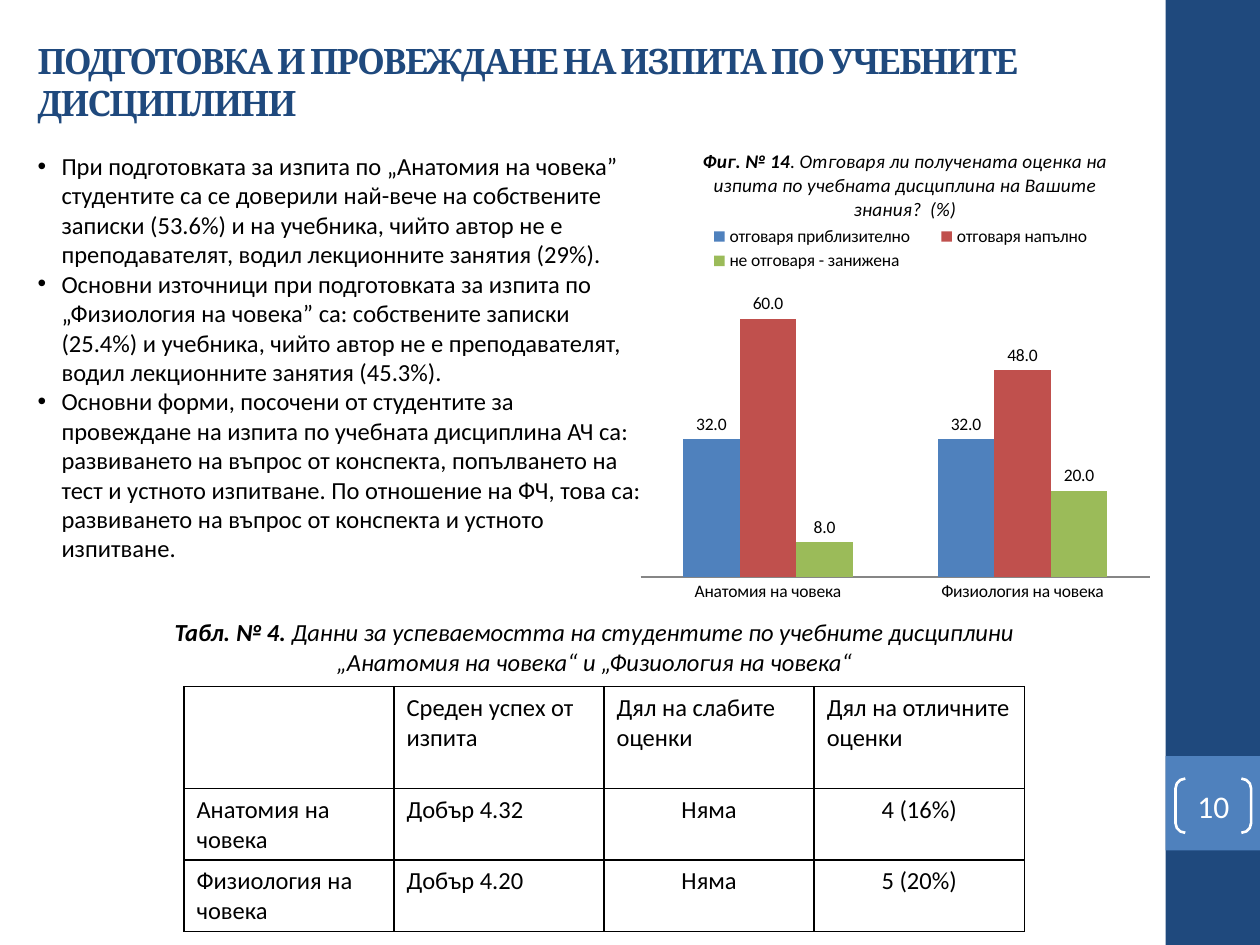
"""Builds the slide on preparing and holding the exam in the two disciplines."""
import pptx
import pptx.chart.data
import pptx.dml.color
import pptx.enum.chart
import pptx.enum.shapes
import pptx.enum.text
import pptx.oxml
import pptx.oxml.ns
import pptx.util

Inches = pptx.util.Inches
Pt = pptx.util.Pt
qn = pptx.oxml.ns.qn
MSO_SHAPE = pptx.enum.shapes.MSO_SHAPE
ANCHOR = pptx.enum.text.MSO_ANCHOR
ALIGN = pptx.enum.text.PP_ALIGN
XL = pptx.enum.chart

COLORS = {
    "navy": "1F497D",
    "blue": "4F81BD",
    "red": "C0504D",
    "green": "9BBB59",
    "axis": "868686",
    "black": "000000",
    "white": "FFFFFF",
}


def rgb(name):
    return pptx.dml.color.RGBColor.from_string(COLORS[name])


def write_run(paragraph, text, size=14, font="Calibri", color="black", bold=False, italic=False, spacing=None):
    run = paragraph.add_run()
    run.text = text
    run.font.size, run.font.name = Pt(size), font
    run.font.bold, run.font.italic = bold, italic
    run.font.color.rgb = rgb(color)
    if spacing is not None:
        run.font._element.set("spc", str(spacing * 100))


def add_bullet(paragraph, indent):
    properties = paragraph._p.get_or_add_pPr()
    properties.set("marL", str(Inches(indent)))
    properties.set("indent", str(-Inches(indent)))
    bullet_font = properties.makeelement(qn("a:buFont"), {"typeface": "Arial"})
    bullet = properties.makeelement(qn("a:buChar"), {"char": "•"})
    properties.extend([bullet_font, bullet])


def set_borders(cell, width):
    properties = cell._tc.get_or_add_tcPr()
    for position, side in enumerate(("lnL", "lnR", "lnT", "lnB")):
        border = pptx.oxml.parse_xml(
            f'<a:{side} {pptx.oxml.ns.nsdecls("a")} w="{Pt(width)}"><a:solidFill>'
            f'<a:srgbClr val="{COLORS["black"]}"/></a:solidFill></a:{side}>'
        )
        properties.insert(position, border)


def set_layout(parent, after=None, inner=False, **fractions):
    for old in parent.findall(qn("c:layout")):
        parent.remove(old)
    target = '<c:layoutTarget val="inner"/>' if inner else ""
    modes = "".join(f'<c:{key}Mode val="edge"/>' for key in "xy")
    values = "".join(f'<c:{key} val="{value}"/>' for key, value in fractions.items())
    layout = pptx.oxml.parse_xml(
        f'<c:layout {pptx.oxml.ns.nsdecls("c")}><c:manualLayout>'
        f"{target}{modes}{values}</c:manualLayout></c:layout>"
    )
    if after:
        parent.find(qn(after)).addnext(layout)
    else:
        parent.insert(0, layout)


class SlideBuilder:
    """Holds the style and the current slide."""

    def __init__(self, slide, font="Calibri", size=14):
        self.slide, self.font, self.size = slide, font, size

    def shape(self, kind, box, fill=None, line=None):
        shape = self.slide.shapes.add_shape(kind, *map(Inches, box))
        shape.shadow.inherit = False
        if fill:
            shape.fill.solid()
            shape.fill.fore_color.rgb = rgb(fill)
        else:
            shape.fill.background()
        if line:
            shape.line.color.rgb = rgb(line)
            shape.line.width = Pt(1.5)
        else:
            shape.line.fill.background()
        return shape

    def text(self, box, paragraphs, align=ALIGN.LEFT, anchor=ANCHOR.TOP, indent=None):
        frame = self.slide.shapes.add_textbox(*map(Inches, box)).text_frame
        frame.word_wrap, frame.vertical_anchor = True, anchor
        for number, runs in enumerate(paragraphs):
            paragraph = frame.add_paragraph() if number else frame.paragraphs[0]
            paragraph.alignment = align
            if indent:
                add_bullet(paragraph, indent)
            for text, style in runs:
                write_run(paragraph, text, **{"font": self.font, "size": self.size, **style})

    def page_number(self, box, number):
        bracket = self.shape(MSO_SHAPE.DOUBLE_BRACKET, box, line="white")
        bracket.adjustments[0] = 0.18
        frame = bracket.text_frame
        frame.margin_left = frame.margin_right = frame.margin_top = frame.margin_bottom = 0
        frame.vertical_anchor = ANCHOR.MIDDLE
        frame.paragraphs[0].alignment = ALIGN.CENTER
        write_run(frame.paragraphs[0], number, size=18, font=self.font, color="white")

    def table(self, box, rows, heights):
        table = self.slide.shapes.add_table(len(rows), len(rows[0]), *map(Inches, box)).table
        table.first_row = table.horz_banding = False
        for row, height in zip(table.rows, heights):
            row.height = Inches(height)
        for r, row in enumerate(rows):
            for c, text in enumerate(row):
                cell = table.cell(r, c)
                cell.fill.background()
                set_borders(cell, 1)
                paragraph = cell.text_frame.paragraphs[0]
                paragraph.alignment = ALIGN.CENTER if r and c > 1 else ALIGN.LEFT
                if text:
                    write_run(paragraph, text, size=self.size, font=self.font)

    def column_chart(self, box, categories, series, title_runs):
        data = pptx.chart.data.CategoryChartData(number_format="0.0")
        data.categories = categories
        for name, values, _ in series:
            data.add_series(name, values)
        chart = self.slide.shapes.add_chart(
            XL.XL_CHART_TYPE.COLUMN_CLUSTERED, *map(Inches, box), data
        ).chart
        chart.font.name, chart.font.size = self.font, Pt(10)
        chart.font.color.rgb = rgb("black")

        title = chart.chart_title
        for text, style in title_runs:
            write_run(title.text_frame.paragraphs[0], text, size=11, font=self.font, **style)
        title.include_in_layout = False
        set_layout(title._element, after="c:tx", x=0.13, y=0.04)

        chart.has_legend = True
        chart.legend.position = XL.XL_LEGEND_POSITION.TOP
        chart.legend.include_in_layout = False
        set_layout(chart.legend._element, after="c:legendPos", x=0.11, y=0.2, w=0.8, h=0.11)

        plot = chart.plots[0]
        plot.gap_width, plot.overlap, plot.vary_by_categories = 150, 0, False
        for bars, (_, _, color) in zip(plot.series, series):
            bars.format.fill.solid()
            bars.format.fill.fore_color.rgb = rgb(color)
            labels = bars.data_labels
            labels.show_value = True
            labels.number_format, labels.number_format_is_linked = "0.0", False
            labels.position = XL.XL_LABEL_POSITION.OUTSIDE_END
        set_layout(plot._element.getparent(), inner=True, x=0.02, y=0.31, w=0.96, h=0.62)

        values_axis = chart.value_axis
        values_axis.minimum_scale, values_axis.maximum_scale = 0, 70
        values_axis.has_major_gridlines = values_axis.visible = False
        chart.category_axis.major_tick_mark = XL.XL_TICK_MARK.NONE
        chart.category_axis.format.line.color.rgb = rgb("axis")


def main():
    deck = pptx.Presentation()
    deck.slide_width, deck.slide_height = Inches(10), Inches(7.5)
    builder = SlideBuilder(deck.slides.add_slide(deck.slide_layouts[6]))

    builder.shape(MSO_SHAPE.RECTANGLE, (9.25, 0, 0.75, 7.5), fill="navy")
    builder.shape(MSO_SHAPE.RECTANGLE, (9.25, 6, 0.75, 0.75), fill="blue")
    heading = {"size": 20, "font": "Cambria", "color": "navy", "bold": True, "spacing": -1}
    builder.text(
        (0.2, 0.21, 8.58, 0.87),
        [[("ПОДГОТОВКА И ПРОВЕЖДАНЕ НА ИЗПИТА ПО УЧЕБНИТЕ ДИСЦИПЛИНИ", heading)]],
        anchor=ANCHOR.MIDDLE,
    )
    builder.page_number((9.33, 6.18, 0.6, 0.43), "10")

    findings = [
        "При подготовката за изпита по „Анатомия на човека” студентите са се доверили най-вече на собствените записки (53.6%) и на учебника, чийто автор не е преподавателят, водил лекционните занятия (29%).",
        "Основни източници при подготовката за изпита по „Физиология на човека” са: собствените записки (25.4%) и учебника, чийто автор не е преподавателят, водил лекционните занятия (45.3%).",
        "Основни форми, посочени от студентите за провеждане на изпита по учебната дисциплина АЧ са: развиването на въпрос от конспекта, попълването на тест и устното изпитване. По отношение на ФЧ, това са: развиването на въпрос от конспекта и устното изпитване.",
    ]
    builder.text((0.2, 1.15, 5.04, 3.54), [[(finding, {})] for finding in findings], indent=0.19)

    disciplines = ["Анатомия на човека", "Физиология на човека"]
    results = [
        ["", "Среден успех от изпита", "Дял на слабите оценки", "Дял на отличните оценки"],
        [disciplines[0], "Добър 4.32", "Няма", "4 (16%)"],
        [disciplines[1], "Добър 4.20", "Няма", "5 (20%)"],
    ]
    builder.table((1.46, 5.45, 6.67, 1.93), results, heights=(0.81, 0.56, 0.56))

    lead, plain = {"bold": True, "italic": True}, {"italic": True}
    caption = " Данни за успеваемостта на студентите по учебните дисциплини „Анатомия на човека“ и „Физиология на човека“"
    builder.text((0.98, 4.85, 7.48, 0.57), [[("Табл. № 4.", lead), (caption, plain)]], align=ALIGN.CENTER)

    answers = [
        ("отговаря приблизително", (32, 32), "blue"),
        ("отговаря напълно", (60, 48), "red"),
        ("не отговаря - занижена", (8, 20), "green"),
    ]
    question = ". Отговаря ли получената оценка на изпита по учебната дисциплина на Вашите знания?  (%)"
    builder.column_chart(
        (5, 0.99, 4.21, 3.86), disciplines, answers, [("Фиг. № 14", lead), (question, plain)]
    )
    deck.save("out.pptx")


if __name__ == "__main__":
    main()
